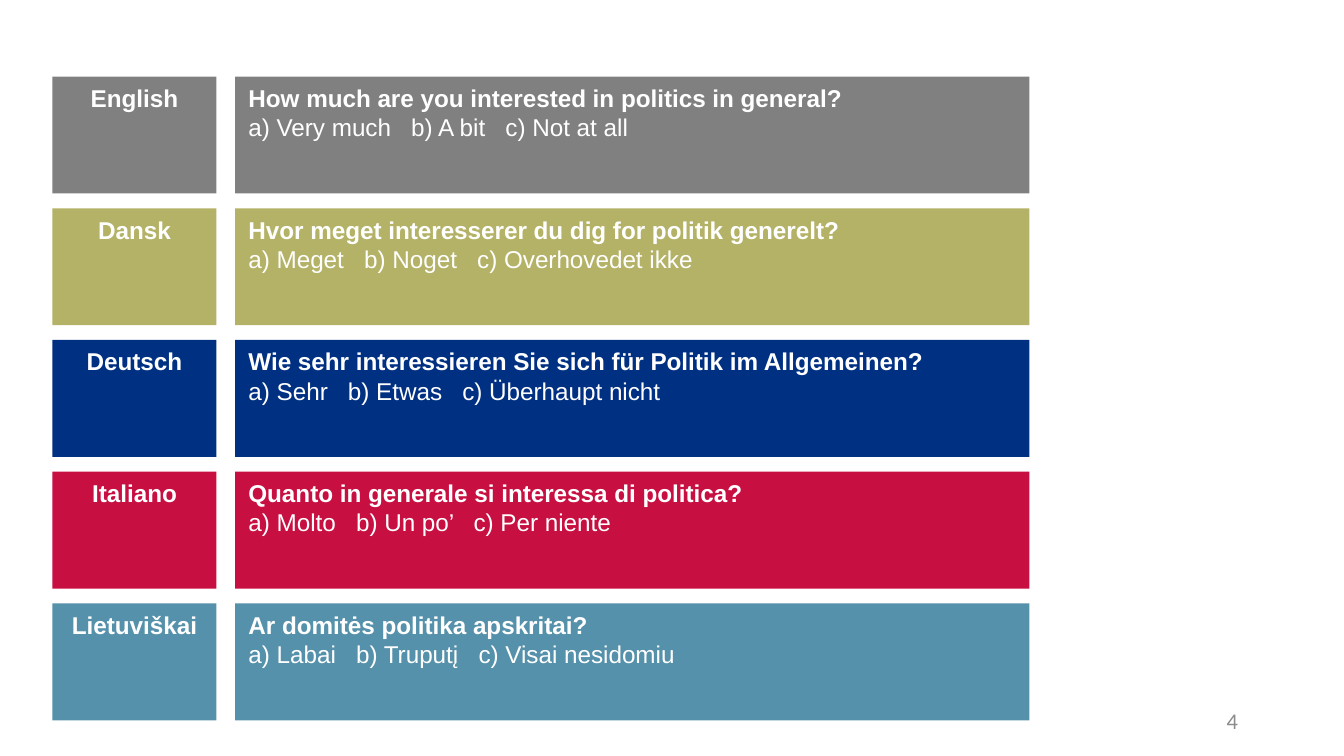
from pptx import Presentation
from pptx.dml.color import RGBColor
from pptx.enum.shapes import MSO_SHAPE as Shape
from pptx.enum.text import MSO_ANCHOR as Anchor, PP_ALIGN as Align
from pptx.util import Inches, Pt

QUESTIONS = [
    ("English", "808080", "How much are you interested in politics in general?",
     ("Very much", "A bit", "Not at all")),
    ("Dansk", "B4B266", "Hvor meget interesserer du dig for politik generelt?",
     ("Meget", "Noget", "Overhovedet ikke")),
    ("Deutsch", "003082", "Wie sehr interessieren Sie sich für Politik im Allgemeinen?",
     ("Sehr", "Etwas", "Überhaupt nicht")),
    ("Italiano", "C80F41", "Quanto in generale si interessa di politica?",
     ("Molto", "Un po’", "Per niente")),
    ("Lietuviškai", "5591AA", "Ar domitės politika apskritai?",
     ("Labai", "Truputį", "Visai nesidomiu")),
]
PAGE_NUMBER = "4"

PAGE_WIDTH = 10
PAGE_HEIGHT = PAGE_WIDTH * 9 / 16
TOP, ROW_STEP, ROW_HEIGHT = 0.57, 0.98, 0.87
LANGUAGE_LEFT, LANGUAGE_WIDTH = 0.39, 1.22
QUESTION_LEFT, QUESTION_WIDTH = 1.75, 5.91


def color(value):
    return RGBColor.from_string(value)


def write(paragraph, text, align, bold=False, size=13, font="Arial", ink="FFFFFF"):
    paragraph.text = text
    paragraph.alignment = align
    paragraph.font.name = font
    paragraph.font.size = Pt(size)
    paragraph.font.bold = bold
    paragraph.font.color.rgb = color(ink)


def add_panel(page, left, top, width, fill):
    panel = page.shapes.add_shape(
        Shape.RECTANGLE, Inches(left), Inches(top), Inches(width), Inches(ROW_HEIGHT))
    panel.shadow.inherit = False
    panel.fill.solid()
    panel.fill.fore_color.rgb = color(fill)
    panel.line.fill.background()
    panel.text_frame.word_wrap = True
    panel.text_frame.vertical_anchor = Anchor.TOP
    return panel.text_frame


def add_page_number(page):
    box = page.shapes.add_textbox(Inches(7.06), Inches(5.21), Inches(2.25), Inches(0.3))
    frame = box.text_frame
    frame.word_wrap = True
    frame.vertical_anchor = Anchor.MIDDLE
    write(frame.paragraphs[0], PAGE_NUMBER, Align.RIGHT, size=12, font="Calibri", ink="8C8C8C")


def main():
    deck = Presentation()
    deck.slide_width, deck.slide_height = Inches(PAGE_WIDTH), Inches(PAGE_HEIGHT)
    page = deck.slides.add_slide(deck.slide_layouts[6])

    for row, (language, fill, question, answers) in enumerate(QUESTIONS):
        top = TOP + row * ROW_STEP
        label = add_panel(page, LANGUAGE_LEFT, top, LANGUAGE_WIDTH, fill)
        write(label.paragraphs[0], language, Align.CENTER, bold=True)

        panel = add_panel(page, QUESTION_LEFT, top, QUESTION_WIDTH, fill)
        write(panel.paragraphs[0], question, Align.LEFT, bold=True)
        options = "   ".join(f"{letter}) {answer}" for letter, answer in zip("abc", answers))
        write(panel.add_paragraph(), options, Align.LEFT)

    add_page_number(page)
    deck.save("out.pptx")


if __name__ == "__main__":
    main()
